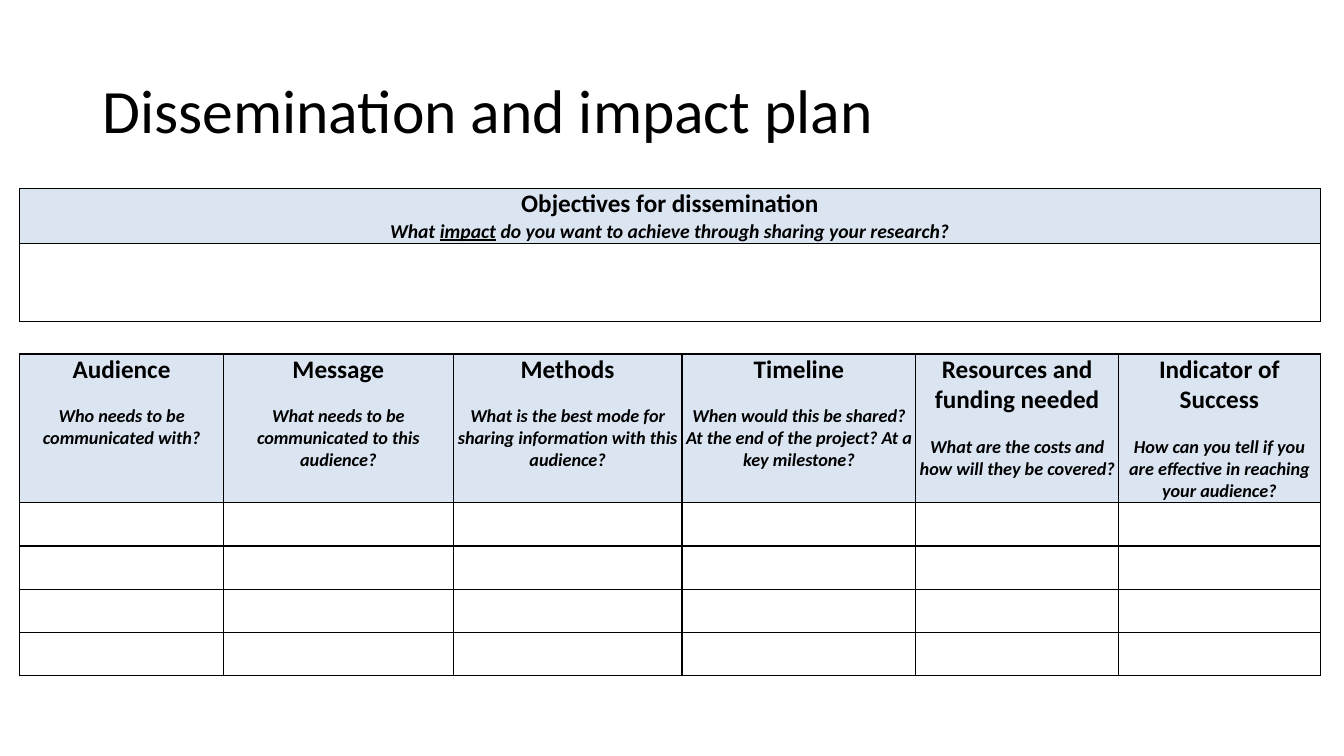
from dataclasses import dataclass

from lxml import etree
from pptx import Presentation
from pptx.dml.color import RGBColor
from pptx.enum.text import MSO_ANCHOR, PP_ALIGN
from pptx.oxml.ns import qn
from pptx.util import Cm, Pt

CENTER, LEFT = PP_ALIGN.CENTER, PP_ALIGN.LEFT
MIDDLE = MSO_ANCHOR.MIDDLE
TITLE_ONLY = 5


@dataclass(frozen=True)
class Theme:
    font: str = "Calibri"
    text: str = "000000"
    border: str = "000000"
    header_fill: str = "DBE5F1"
    body_fill: str = "FFFFFF"
    title_size: int = 44
    heading_size: int = 18
    objective_size: int = 14
    question_size: int = 13
    question_gap: float = 14.6
    border_width: int = 1


THEME = Theme()

OBJECTIVE_RUNS = [
    ("What ", False),
    ("impact", True),
    (" do you want to achieve through sharing your research?", False),
]

# Heading, question, column width in cm
PLAN_COLUMNS = [
    ("Audience", "Who needs to be communicated with?", 5.13),
    ("Message", "What needs to be communicated to this audience?", 5.79),
    ("Methods", "What is the best mode for sharing information with this audience?", 5.77),
    ("Timeline", "When would this be shared? At the end of the project? At a key milestone?", 5.89),
    ("Resources and funding needed", "What are the costs and how will they be covered?", 5.11),
    ("Indicator of Success", "How can you tell if you are effective in reaching your audience?", 5.08),
]


def style_paragraph(paragraph, size, alignment=CENTER, bold=False, italic=False):
    paragraph.alignment = alignment
    font = paragraph.font
    font.name, font.size = THEME.font, Pt(size)
    font.bold, font.italic = bold, italic
    font.color.rgb = RGBColor.from_string(THEME.text)


def add_borders(cell):
    properties = cell._tc.get_or_add_tcPr()
    for side in ("a:lnL", "a:lnR", "a:lnT", "a:lnB"):
        line = etree.SubElement(properties, qn(side), w=str(Pt(THEME.border_width)))
        fill = etree.SubElement(line, qn("a:solidFill"))
        etree.SubElement(fill, qn("a:srgbClr"), val=THEME.border)


def add_grid(slide, left, top, widths, heights):
    """Add a bordered table with a tinted first row; sizes are in cm."""
    frame = slide.shapes.add_table(
        len(heights), len(widths), Cm(left), Cm(top), Cm(sum(widths)), Cm(sum(heights)))
    table = frame.table
    table.first_row = table.horz_banding = False
    for column, width in zip(table.columns, widths):
        column.width = Cm(width)
    for index, (row, height) in enumerate(zip(table.rows, heights)):
        row.height = Cm(height)
        color = THEME.body_fill if index else THEME.header_fill
        for cell in row.cells:
            add_borders(cell)
            cell.fill.solid()
            cell.fill.fore_color.rgb = RGBColor.from_string(color)
    return table


def fill_header(cell, heading, question_runs, question_size, gap, side_margin):
    cell.margin_left = cell.margin_right = Cm(side_margin)
    cell.margin_top = cell.margin_bottom = 0
    title = cell.text_frame.paragraphs[0]
    title.text = heading
    style_paragraph(title, THEME.heading_size, bold=True)
    question = cell.text_frame.add_paragraph()
    style_paragraph(question, question_size, bold=True, italic=True)
    question.space_before = Pt(gap)
    for text, underlined in question_runs:
        run = question.add_run()
        run.text = text
        if underlined:
            run.font.underline = True


def add_title(slide, left, top, width, height):
    title = slide.shapes.title
    title.left, title.top, title.width, title.height = map(Cm, (left, top, width, height))
    frame = title.text_frame
    frame.text = "Dissemination and impact plan"
    frame.vertical_anchor = MIDDLE
    style_paragraph(frame.paragraphs[0], THEME.title_size, LEFT)
    frame.paragraphs[0].line_spacing = 0.9


def add_objectives(slide, left, top, width):
    table = add_grid(slide, left, top, [width], [1.38, 1.96])
    fill_header(table.cell(0, 0), "Objectives for dissemination", OBJECTIVE_RUNS,
                THEME.objective_size, 0, 0.18)


def add_plan(slide, left, top):
    widths = [width for _, _, width in PLAN_COLUMNS]
    table = add_grid(slide, left, top, widths, [3.75] + [1.09] * 4)
    for cell, (heading, question, _) in zip(table.rows[0].cells, PLAN_COLUMNS):
        fill_header(cell, heading, [(question, False)],
                    THEME.question_size, THEME.question_gap, 0.08)


def main():
    presentation = Presentation()
    presentation.slide_width, presentation.slide_height = Cm(33.87), Cm(19.05)
    slide = presentation.slides.add_slide(presentation.slide_layouts[TITLE_ONLY])
    add_title(slide, 2.33, 1.02, 29.21, 3.68)
    add_objectives(slide, 0.5, 4.76, 32.77)
    add_plan(slide, 0.5, 8.92)
    presentation.save("out.pptx")


if __name__ == "__main__":
    main()
